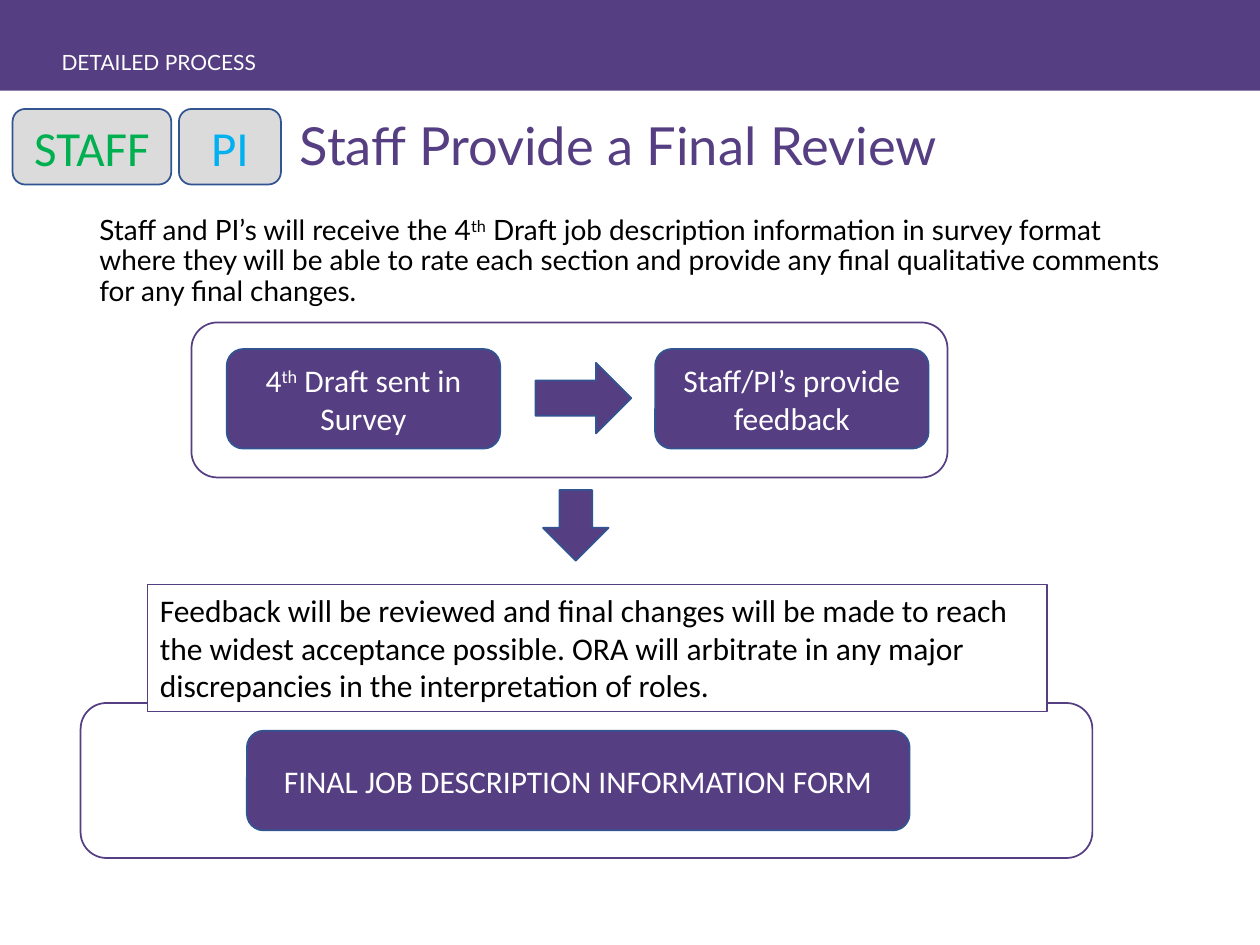
from pptx import Presentation
from pptx.dml.color import RGBColor
from pptx.enum.shapes import MSO_SHAPE
from pptx.enum.text import MSO_ANCHOR, PP_ALIGN
from pptx.util import Inches, Pt

COLS, ROWS = 100, 75
CELL = Inches(0.1)
PURPLE, EDGE, GREY, WHITE, BLACK = "563E82", "325491", "DBDBDB", "FFFFFF", "000000"
BODY = {"size": Pt(18), "name": "Calibri"}
LATO = {"name": "Lato"}
BOX_ROWS, FRAME_ROWS = 7.9, 12.3


def rgb(value):
    """Turn a hex string into a colour."""
    return RGBColor.from_string(value)


def grid(*cells):
    """Convert columns and rows into lengths."""
    return [round(c * CELL) for c in cells]


def write(sp, text, color, font, anchor=MSO_ANCHOR.TOP, **para):
    """Write one paragraph, raising the parts between carets."""
    tf = sp.text_frame
    tf.word_wrap, tf.vertical_anchor = True, anchor
    p = tf.paragraphs[0]
    for name, value in para.items():
        setattr(p, name, value)
    for i, part in enumerate(text.split("^")):
        r = p.add_run()
        r.text = part
        r.font.color.rgb = rgb(color)
        for name, value in font.items():
            setattr(r.font, name, value)
        if i % 2:
            r.font._element.set("baseline", "30000")


def add_shape(s, kind, cells, fill=None, line=None, width=1, rotation=0):
    """Add a flat preset shape on the grid."""
    sp = s.shapes.add_shape(kind, *grid(*cells))
    sp.shadow.inherit = False
    sp.rotation = rotation
    if fill:
        sp.fill.solid()
        sp.fill.fore_color.rgb = rgb(fill)
    else:
        sp.fill.background()
    if line:
        sp.line.color.rgb, sp.line.width = rgb(line), Pt(width)
    else:
        sp.line.fill.background()
    return sp


def add_box(s, cells, text, fill=PURPLE, color=WHITE, size=18):
    """Add a rounded box with a centred label."""
    sp = add_shape(s, MSO_SHAPE.ROUNDED_RECTANGLE, cells, fill, EDGE)
    write(sp, text, color, {**BODY, "size": Pt(size)}, MSO_ANCHOR.MIDDLE,
          alignment=PP_ALIGN.CENTER)


def add_frame(s, col, row, cols):
    """Add an outlined group frame."""
    add_shape(s, MSO_SHAPE.ROUNDED_RECTANGLE, (col, row, cols, FRAME_ROWS), line=PURPLE)


def add_arrow(s, cells, rotation=0):
    """Add a block arrow."""
    add_shape(s, MSO_SHAPE.RIGHT_ARROW, cells, PURPLE, EDGE, rotation=rotation)


def add_text(s, cells, text, color, size):
    """Add a plain text box."""
    sp = s.shapes.add_textbox(*grid(*cells))
    write(sp, text, color, {**LATO, "size": Pt(size)}, line_spacing=0.9)


def add_title(s, cells, text):
    """Place and format the title placeholder."""
    sp = s.shapes.title
    sp.left, sp.top, sp.width, sp.height = grid(*cells)
    write(sp, text, PURPLE, {**LATO, "size": Pt(30)}, MSO_ANCHOR.MIDDLE,
          alignment=PP_ALIGN.LEFT, line_spacing=0.9)


def main():
    """Build the final review slide."""
    prs = Presentation()
    prs.slide_width, prs.slide_height = grid(COLS, ROWS)
    s = prs.slides.add_slide(prs.slide_layouts[5])

    add_shape(s, MSO_SHAPE.RECTANGLE, (0, 0, COLS, 7.2), PURPLE)
    add_text(s, (3.9, 3.7, 20.8, 3.2), "DETAILED PROCESS", WHITE, 12)
    add_title(s, (22.8, 7.6, 70.3, 8.4), "Staff Provide a Final Review")
    add_text(s, (6.9, 16.7, 86.2, 9.5),
             "Staff and PI’s will receive the 4^th^ Draft job description information "
             "in survey format where they will be able to rate each section and provide "
             "any final qualitative comments for any final changes.", BLACK, 16)

    for col, cols, text, color in ((1, 12.6, "STAFF", "00B050"), (14.2, 8.1, "PI", "00B0F0")):
        add_box(s, (col, 8.65, cols, 6), text, GREY, color, 28)

    add_frame(s, 15.2, 25.6, 60)
    for col, text in ((18, "4^th^ Draft sent in Survey"), (52, "Staff/PI’s provide feedback")):
        add_box(s, (col, 27.7, 21.7, BOX_ROWS), text)
    add_arrow(s, (42.5, 28.8, 7.6, 5.6))
    add_arrow(s, (42.9, 39.1, 5.6, 5.2), rotation=90)

    add_frame(s, 6.4, 55.8, 80.3)
    note = add_shape(s, MSO_SHAPE.RECTANGLE, (11.7, 46.4, 71.4, 10.1), WHITE, PURPLE, 0.75)
    write(note, "Feedback will be reviewed and final changes will be made to reach the "
          "widest acceptance possible. ORA will arbitrate in any major discrepancies "
          "in the interpretation of roles.", BLACK, BODY, alignment=PP_ALIGN.LEFT)
    add_box(s, (19.6, 58, 52.6, BOX_ROWS), "FINAL JOB DESCRIPTION INFORMATION FORM")

    prs.save("out.pptx")


if __name__ == "__main__":
    main()
